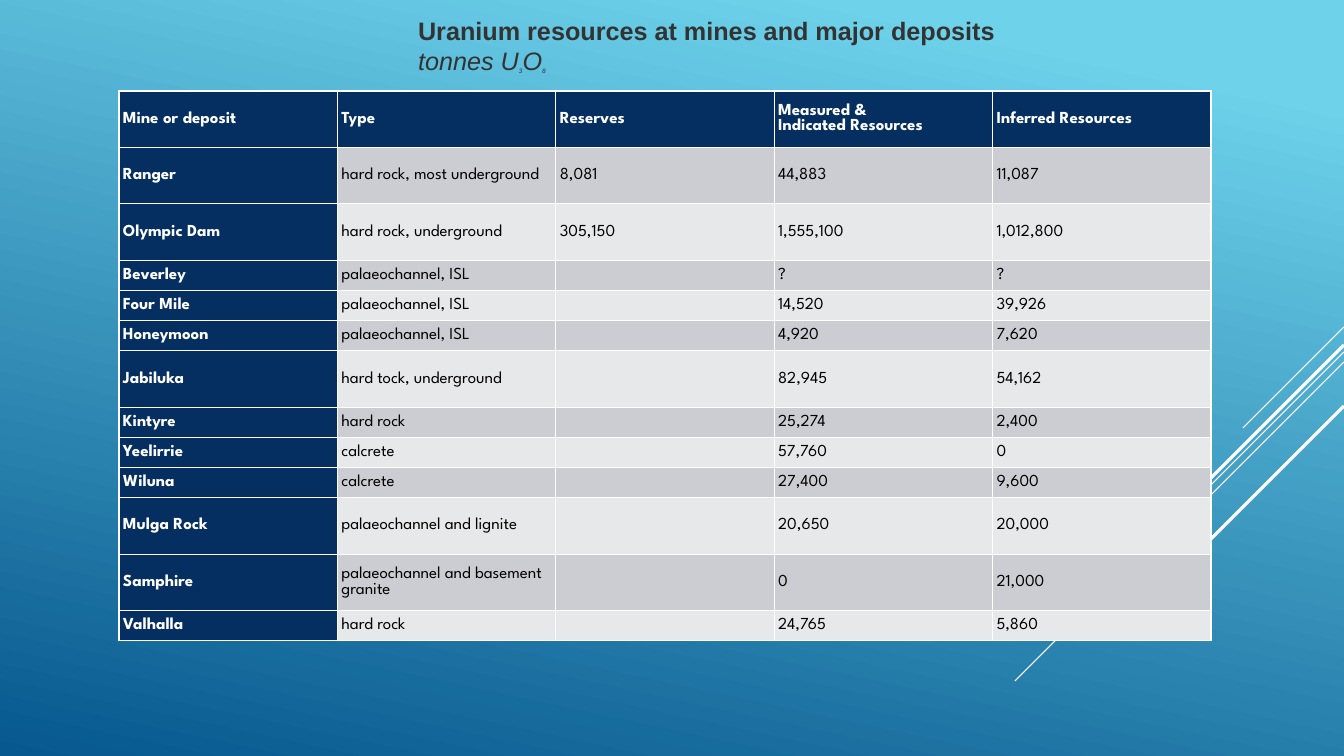
from pptx import Presentation
from pptx.dml.color import RGBColor
from pptx.enum.shapes import MSO_CONNECTOR
from pptx.enum.text import MSO_ANCHOR, MSO_AUTO_SIZE, PP_ALIGN
from pptx.oxml.ns import qn
from pptx.util import Emu, Pt
from lxml.etree import SubElement

WHITE = RGBColor(0xFF, 0xFF, 0xFF)
BLACK = RGBColor(0, 0, 0)
GREY = RGBColor(0x33, 0x33, 0x33)
NAVY = RGBColor(0x05, 0x2F, 0x61)
BAND_DARK = RGBColor(0xCC, 0xCD, 0xD2)
BAND_LIGHT = RGBColor(0xE7, 0xE8, 0xEA)
SKY = RGBColor(0x6E, 0xD2, 0xEB)
OCEAN = RGBColor(0x06, 0x58, 0x8E)

DIAGONALS = [(327, 101, 0.75), (352, 329, 0.75), (362, 209, 0.75),
             (345, 193, 2.25), (406, 140, 2.25)]
TALL, SHORT = 28, 15
ROWS = [
    (TALL, "Mine or deposit", "Type", "Reserves",
     "Measured &\vIndicated Resources", "Inferred Resources"),
    (TALL, "Ranger", "hard rock, most underground", "8,081", "44,883", "11,087"),
    (TALL, "Olympic Dam", "hard rock, underground", "305,150", "1,555,100", "1,012,800"),
    (SHORT, "Beverley", "palaeochannel, ISL", "", "?", "?"),
    (SHORT, "Four Mile", "palaeochannel, ISL", "", "14,520", "39,926"),
    (SHORT, "Honeymoon", "palaeochannel, ISL", "", "4,920", "7,620"),
    (TALL, "Jabiluka", "hard tock, underground", "", "82,945", "54,162"),
    (SHORT, "Kintyre", "hard rock", "", "25,274", "2,400"),
    (SHORT, "Yeelirrie", "calcrete", "", "57,760", "0"),
    (SHORT, "Wiluna", "calcrete", "", "27,400", "9,600"),
    (TALL, "Mulga Rock", "palaeochannel and lignite", "", "20,650", "20,000"),
    (TALL, "Samphire", "palaeochannel and basement granite", "", "0", "21,000"),
    (SHORT, "Valhalla", "hard rock", "", "24,765", "5,860"),
]


def px(n):
    return Emu(round(n * 914400 / 100.8))


def paint_background(s):
    fill = s.background.fill
    fill.gradient()
    fill.gradient_angle = 258
    for stop, color, position in zip(fill.gradient_stops, (SKY, OCEAN), (0.1, 1)):
        stop.color.rgb = color
        stop.position = position


def add_diagonal(s, top, length, weight):
    line = s.shapes.add_connector(MSO_CONNECTOR.STRAIGHT, px(1344), px(top),
                                  px(1344 - length), px(top + length))
    line.line.color.rgb = WHITE
    line.line.width = Pt(weight)
    SubElement(line._element.spPr, qn("a:effectLst"))


def add_run(p, text, size=18, bold=False, subscript=False):
    r = p.add_run()
    r.text = text
    r.font.size = Pt(size)
    r.font.bold = bold
    r.font.italic = not bold
    if subscript:
        r.font._element.set("baseline", "-25000")


def write_title(s):
    title = s.shapes.title
    title.left, title.top, title.width, title.height = px(408), px(10), px(672), px(72)
    tf = title.text_frame
    tf.word_wrap = True
    tf.auto_size = MSO_AUTO_SIZE.NONE
    tf.vertical_anchor = MSO_ANCHOR.TOP
    p = tf.paragraphs[0]
    p.alignment = PP_ALIGN.LEFT
    p.space_after = Pt(5.8)
    p.font.name = "Arial"
    p.font.size = Pt(18)
    p.font.color.rgb = GREY
    add_run(p, "Uranium resources at mines and major deposits", bold=True)
    p.add_line_break()
    SubElement(p._p.find(qn("a:br")), qn("a:rPr")).set("sz", "1800")
    add_run(p, "tonnes U")
    add_run(p, "3", 8, subscript=True)
    add_run(p, "O")
    add_run(p, "8", 8, subscript=True)


def write_cell(cell, text, fill, color, bold):
    cell.fill.solid()
    cell.fill.fore_color.rgb = fill
    cell.vertical_anchor = MSO_ANCHOR.MIDDLE
    cell.margin_left = cell.margin_right = px(4)
    cell.margin_top = cell.margin_bottom = px(2)
    cell.text = text
    p = cell.text_frame.paragraphs[0]
    p.font.name = "League Spartan"
    p.font.size = Pt(12)
    p.font.bold = bold
    p.font.color.rgb = color
    if not text:
        p._p.get_or_add_endParaRPr().set("sz", "1200")


def add_resource_table(s):
    width, height = px(1092), px(550)
    columns = len(ROWS[0]) - 1
    table = s.shapes.add_table(len(ROWS), columns, px(119), px(91), width, height).table
    table.first_col = True
    for column in table.columns:
        column.width = Emu(width // columns)
    total = sum(row[0] for row in ROWS)
    for i, (share, *texts) in enumerate(ROWS):
        table.rows[i].height = Emu(height * share // total)
        band = BAND_DARK if i % 2 else BAND_LIGHT
        for j, text in enumerate(texts):
            heading = i == 0 or j == 0
            write_cell(table.cell(i, j), text, NAVY if heading else band,
                       WHITE if heading else BLACK, heading)


def main():
    prs = Presentation()
    prs.slide_width, prs.slide_height = px(1344), px(756)
    s = prs.slides.add_slide(prs.slide_layouts[5])
    paint_background(s)
    for diagonal in DIAGONALS:
        add_diagonal(s, *diagonal)
    add_resource_table(s)
    write_title(s)
    prs.save("out.pptx")


if __name__ == "__main__":
    main()
